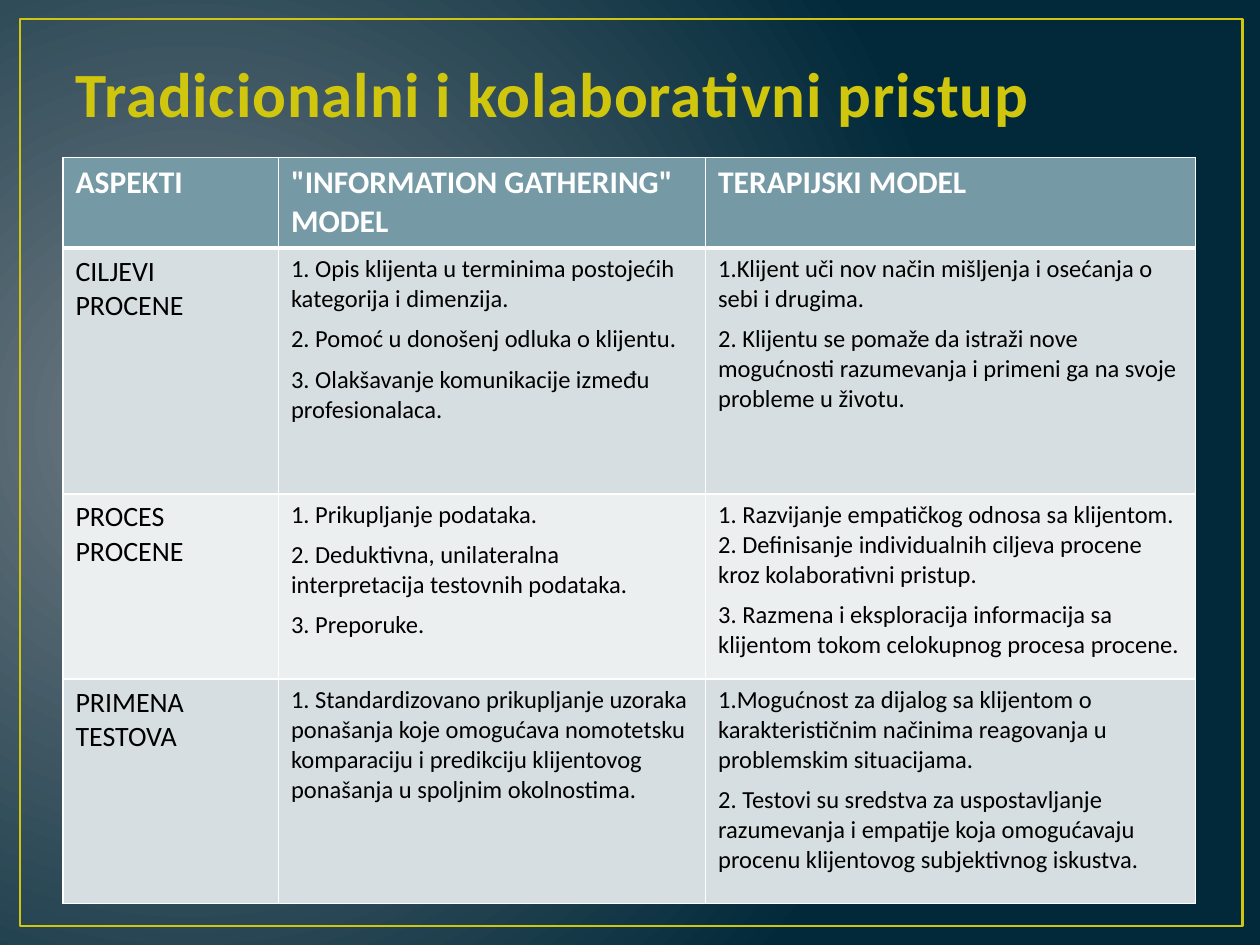
from lxml.etree import SubElement
from pptx import Presentation
from pptx.dml.color import RGBColor
from pptx.enum.shapes import MSO_SHAPE
from pptx.enum.text import MSO_ANCHOR
from pptx.oxml.ns import qn
from pptx.util import Inches, Pt

FONT = "Calibri"
GOLD, WHITE, BLACK = "CFC60D", "FFFFFF", "000000"
HEADER_FILL, BAND_FILLS = "759AA5", ("D6DEE1", "ECEFF0")
COLUMNS = (1.71, 3.39, 3.89)
ROWS = (0.72, 1.95, 1.47, 1.78)

TITLE = "Tradicionalni i kolaborativni pristup"
HEADINGS = ("ASPEKTI", '"INFORMATION GATHERING" MODEL', "TERAPIJSKI MODEL")
ASPECTS = (
    ("CILJEVI PROCENE",
     ("1. Opis klijenta u terminima postojećih kategorija i dimenzija.",
      "2. Pomoć u donošenj odluka o klijentu.",
      "3. Olakšavanje komunikacije između profesionalaca."),
     ("1.Klijent uči nov način mišljenja i osećanja o sebi i drugima.",
      "2. Klijentu se pomaže da istraži nove mogućnosti razumevanja i primeni "
      "ga na svoje probleme u životu.")),
    ("PROCES PROCENE",
     ("1. Prikupljanje podataka.",
      "2. Deduktivna, unilateralna interpretacija testovnih podataka.",
      "3. Preporuke."),
     ("1. Razvijanje empatičkog odnosa sa klijentom. 2. Definisanje "
      "individualnih ciljeva procene kroz kolaborativni pristup.",
      "3. Razmena i eksploracija informacija sa klijentom tokom celokupnog "
      "procesa procene.")),
    ("PRIMENA TESTOVA",
     ("1. Standardizovano prikupljanje uzoraka ponašanja koje omogućava "
      "nomotetsku komparaciju i predikciju klijentovog ponašanja u spoljnim "
      "okolnostima.",),
     ("1.Mogućnost za dijalog sa klijentom o karakterističnim načinima "
      "reagovanja u problemskim situacijama.",
      "2. Testovi su sredstva za uspostavljanje razumevanja i empatije koja "
      "omogućavaju procenu klijentovog subjektivnog iskustva.")),
)


def color(hex_code):
    return RGBColor.from_string(hex_code)


def write(frame, lines, size, hex_code, bold=False, space_before=None):
    """Fill a text frame with one paragraph per line and return the last run."""
    for index, line in enumerate(lines):
        para = frame.paragraphs[0] if index == 0 else frame.add_paragraph()
        if space_before is not None:
            para.space_before = Pt(space_before)
        span = para.add_run()
        span.text = line
        span.font.name = FONT
        span.font.size = Pt(size)
        span.font.bold = bold
        span.font.color.rgb = color(hex_code)
    return span


def paint_background(page):
    fill = page.background.fill
    fill.gradient()
    for stop, position, hex_code in zip(fill.gradient_stops, (0, 1), ("717C84", "01293A")):
        stop.position = position
        stop.color.rgb = color(hex_code)
    # Turn the linear gradient into a circular one
    gradient = page.element.find(".//" + qn("a:gradFill"))
    gradient.remove(gradient.find(qn("a:lin")))
    circle = SubElement(gradient, qn("a:path"), {"path": "circle"})
    SubElement(circle, qn("a:fillToRect"), l="15000", t="50000", r="85000", b="60000")


def add_frame(page):
    frame = page.shapes.add_shape(
        MSO_SHAPE.RECTANGLE, Inches(0.16), Inches(0.15), Inches(9.7), Inches(7.2))
    frame.shadow.inherit = False
    frame.fill.background()
    frame.line.color.rgb = color(GOLD)
    frame.line.width = Pt(1.5)


def add_title(page):
    box = page.shapes.add_textbox(Inches(0.5), Inches(0.3), Inches(9), Inches(0.78))
    box.text_frame.word_wrap = True
    box.text_frame.vertical_anchor = MSO_ANCHOR.BOTTOM
    span = write(box.text_frame, [TITLE], 36, GOLD, bold=True)
    span.font._element.set("spc", "50")


def style_cell(cell, hex_code, top=1, bottom=1):
    properties = cell._tc.get_or_add_tcPr()
    for side, width in (("L", 1), ("R", 1), ("T", top), ("B", bottom)):
        border = SubElement(properties, qn("a:ln" + side), w=str(Pt(width)))
        solid = SubElement(border, qn("a:solidFill"))
        SubElement(solid, qn("a:srgbClr"), val=WHITE)
    cell.fill.solid()
    cell.fill.fore_color.rgb = color(hex_code)


def add_comparison(page):
    table = page.shapes.add_table(
        len(ROWS), len(COLUMNS), Inches(0.5), Inches(1.25),
        Inches(sum(COLUMNS)), Inches(sum(ROWS))).table
    for column, width in zip(table.columns, COLUMNS):
        column.width = Inches(width)
    for row, height in zip(table.rows, ROWS):
        row.height = Inches(height)

    # Header row, with a heavy rule below
    for cell, heading in zip(table.rows[0].cells, HEADINGS):
        style_cell(cell, HEADER_FILL, bottom=3)
        write(cell.text_frame, [heading], 18, WHITE, bold=True)

    # One banded row per aspect: its name, then the points of each model
    for index, (aspect, *models) in enumerate(ASPECTS):
        cells = list(table.rows[index + 1].cells)
        for cell in cells:
            style_cell(cell, BAND_FILLS[index % 2], top=3 if index == 0 else 1)
        write(cells[0].text_frame, [aspect], 16, BLACK)
        for cell, points in zip(cells[1:], models):
            write(cell.text_frame, points, 14, BLACK, space_before=6)


def main():
    deck = Presentation()
    deck.slide_width, deck.slide_height = Inches(10), Inches(7.5)
    page = deck.slides.add_slide(deck.slide_layouts[6])
    paint_background(page)
    add_frame(page)
    add_title(page)
    add_comparison(page)
    deck.save("out.pptx")


if __name__ == "__main__":
    main()
